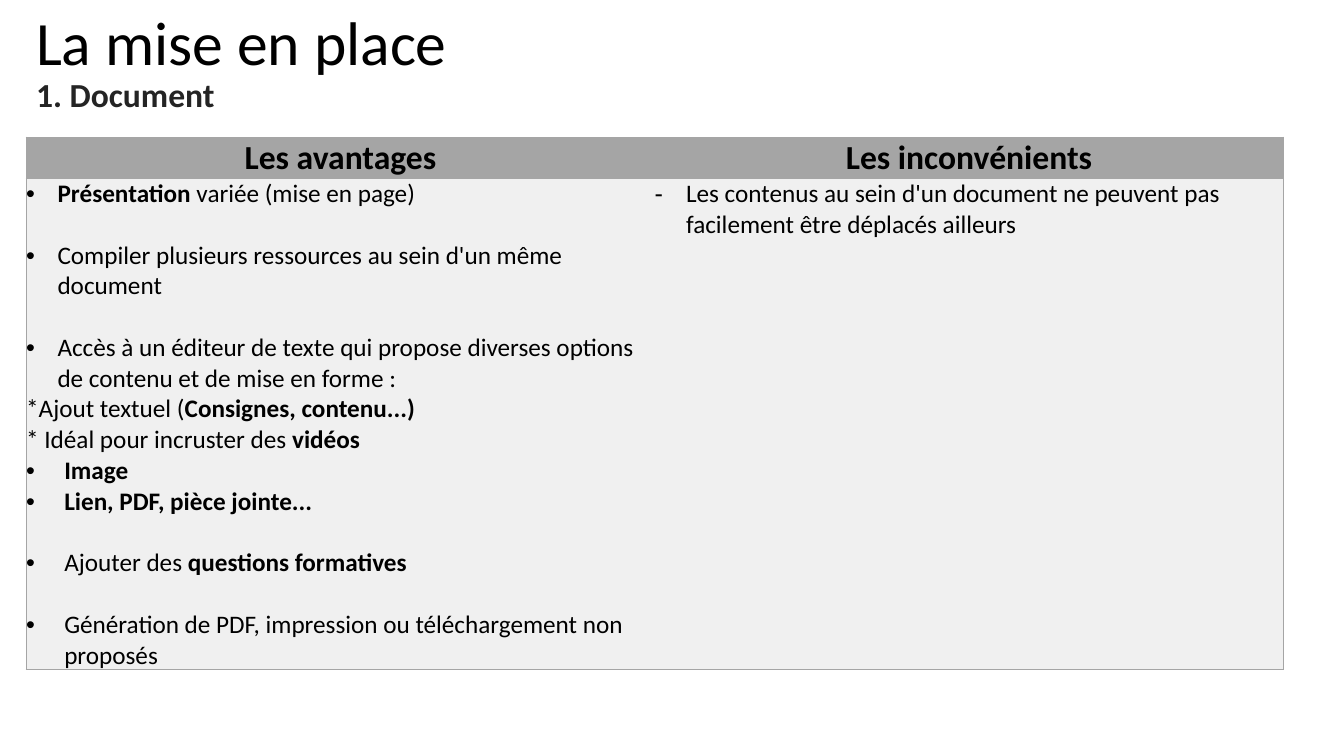
from dataclasses import dataclass

from lxml import etree
from pptx import Presentation
from pptx.dml.color import RGBColor
from pptx.enum.text import MSO_ANCHOR, PP_ALIGN
from pptx.oxml.ns import qn
from pptx.util import Cm, Pt

MIDDLE = MSO_ANCHOR.MIDDLE
TOP = MSO_ANCHOR.TOP
CENTER = PP_ALIGN.CENTER
LEFT = PP_ALIGN.LEFT


@dataclass(frozen=True)
class Theme:
    """Colours, font and type sizes of the slide."""
    font: str = "Calibri"
    ink: str = "000000"
    dark: str = "242424"
    head: str = "A5A5A5"
    body: str = "F0F0F0"
    title: int = 44
    sub: int = 24
    text: int = 18
    gap: int = 22


THEME = Theme()
NEAR, FAR = 0.79, 0.96

PROS = [
    ("•", NEAR, False, [("Présentation", True), (" variée (mise en page)", False)]),
    ("•", NEAR, True, [("Compiler plusieurs ressources au sein d'un même document", False)]),
    ("•", NEAR, True, [("Accès à un éditeur de texte qui propose diverses options "
                        "de contenu et de mise en forme :", False)]),
    ("", 0, False, [("*Ajout textuel (", False), ("Consignes, contenu...)", True)]),
    ("", 0, False, [("* Idéal pour incruster des ", False), ("vidéos", True)]),
    ("•", FAR, False, [("Image", True)]),
    ("•", FAR, False, [("Lien, PDF, pièce jointe...", True)]),
    ("•", FAR, True, [("Ajouter des ", False), ("questions formatives", True)]),
    ("•", FAR, True, [("Génération de PDF, impression ou téléchargement non proposés", False)]),
]
CONS = [
    ("-", NEAR, False, [("Les contenus au sein d'un document ne peuvent pas "
                         "facilement être déplacés ailleurs", False)]),
]
COLUMNS = [("Les avantages", PROS), ("Les inconvénients", CONS)]


def add_run(para, text, size, color, bold=False):
    """Add one styled run to a paragraph."""
    run = para.add_run()
    run.text = text
    font = run.font
    font.name, font.size, font.bold = THEME.font, Pt(size), bold
    font.color.rgb = RGBColor.from_string(color)


def add_label(slide, box, text, size, color, bold, space, anchor):
    """Place a one-line text box."""
    frame = slide.shapes.add_textbox(*map(Cm, box)).text_frame
    frame.word_wrap = True
    frame.vertical_anchor = anchor
    para = frame.paragraphs[0]
    para.line_spacing = space
    add_run(para, text, size, color, bold)


def set_mark(para, mark, indent):
    """Give a paragraph a bullet with a hanging indent."""
    props = para._p.get_or_add_pPr()
    props.set("marL", str(Cm(indent)))
    props.set("indent", str(-Cm(indent)))
    etree.SubElement(props, qn("a:buFont")).set("typeface", "Arial")
    etree.SubElement(props, qn("a:buChar")).set("char", mark)


def style_cell(cell, fill, anchor, sides):
    """Set the margins, borders and fill of a cell."""
    cell.margin_left = cell.margin_right = cell.margin_top = cell.margin_bottom = 0
    cell.vertical_anchor = anchor
    props = cell._tc.get_or_add_tcPr()
    for side in "LRTB":
        line = etree.SubElement(props, qn(f"a:ln{side}"), w=str(Pt(1)))
        if side in sides:
            solid = etree.SubElement(line, qn("a:solidFill"))
            etree.SubElement(solid, qn("a:srgbClr"), val=THEME.head)
        else:
            etree.SubElement(line, qn("a:noFill"))
    cell.fill.solid()
    cell.fill.fore_color.rgb = RGBColor.from_string(fill)


def fill_list(frame, items):
    """Write list items into a text frame."""
    for i, (mark, indent, gap, runs) in enumerate(items):
        para = frame.add_paragraph() if i else frame.paragraphs[0]
        para.alignment = LEFT
        if mark:
            set_mark(para, mark, indent)
        if gap:
            para.space_before = Pt(THEME.gap)
        for text, bold in runs:
            add_run(para, text, THEME.text, THEME.ink, bold)


def add_heading(slide, box):
    """Place the title and its subtitle."""
    left, top, width, height = box
    add_label(slide, (left, top, width, height), "La mise en place",
              THEME.title, THEME.ink, False, 0.9, MIDDLE)
    add_label(slide, (left, top + height, 16.94, 1.45), "1. Document",
              THEME.sub, THEME.dark, True, Pt(12), TOP)


def add_grid(slide, box, head):
    """Place the two-column table of pros and cons."""
    left, top, width, height = box
    table = slide.shapes.add_table(2, len(COLUMNS), *map(Cm, box)).table
    table.horz_banding = False
    table.rows[0].height = Cm(head)
    table.rows[1].height = Cm(height - head)
    for i, (name, items) in enumerate(COLUMNS):
        table.columns[i].width = Cm(width / len(COLUMNS))
        sides = "TB" + "LR"[i]
        cell = table.cell(0, i)
        style_cell(cell, THEME.head, MIDDLE, sides)
        para = cell.text_frame.paragraphs[0]
        para.alignment = CENTER
        add_run(para, name, THEME.sub, THEME.ink, True)
        cell = table.cell(1, i)
        style_cell(cell, THEME.body, TOP, sides)
        fill_list(cell.text_frame, items)


def main():
    """Build and save the slide."""
    deck = Presentation()
    deck.slide_width, deck.slide_height = Cm(33.87), Cm(19.05)
    slide = deck.slides.add_slide(deck.slide_layouts[6])
    add_heading(slide, (0.66, -0.02, 29.21, 2.36))
    add_grid(slide, (0.66, 3.46, 31.68, 13.42), 1.04)
    deck.save("out.pptx")


if __name__ == "__main__":
    main()
